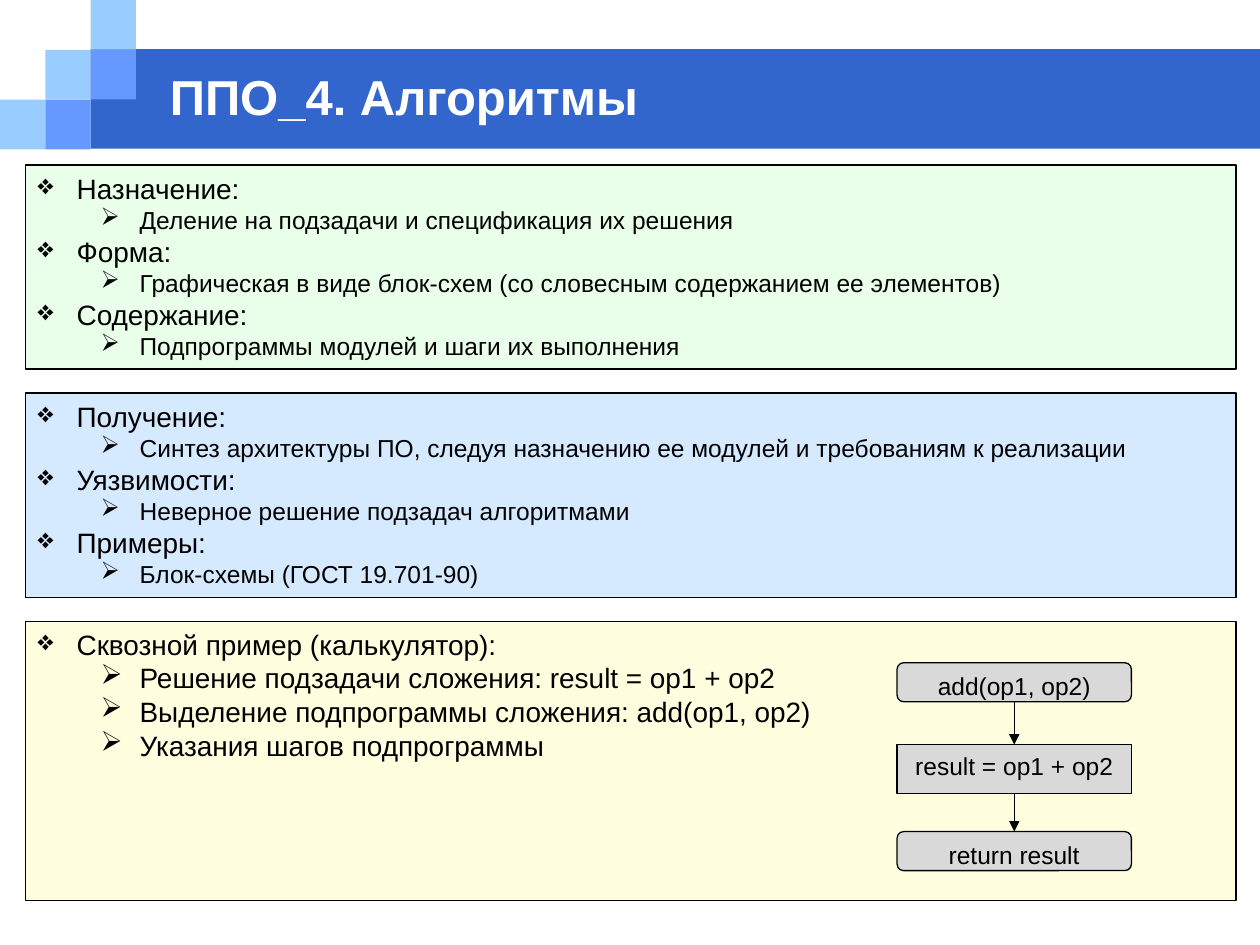
from lxml.etree import SubElement
from pptx import Presentation
from pptx.dml.color import RGBColor
from pptx.enum.shapes import MSO_CONNECTOR, MSO_SHAPE
from pptx.enum.text import MSO_ANCHOR, PP_ALIGN
from pptx.oxml.ns import qn
from pptx.util import Inches, Pt

BLACK = RGBColor(0x00, 0x00, 0x00)
WHITE = RGBColor(0xFF, 0xFF, 0xFF)
BAND_BLUE = RGBColor(0x33, 0x66, 0xCC)
LIGHT_BLUE = RGBColor(0x99, 0xCC, 0xFF)
MIDDLE_BLUE = RGBColor(0x66, 0x99, 0xFF)
GREEN = RGBColor(0x99, 0xFF, 0x99)
BLUE = RGBColor(0x33, 0x99, 0xFF)
YELLOW = RGBColor(0xFF, 0xFF, 0x66)
GREY = RGBColor(0xD9, 0xD9, 0xD9)

BULLETS = ["❖", "➢"]
INDENTS = [0.31, 0.81]

presentation = Presentation()
presentation.slide_width = Inches(10)
presentation.slide_height = Inches(7.5)
slide = presentation.slides.add_slide(presentation.slide_layouts[6])


def add_block(kind, left, top, width, height, fill, outlined=True):
    shape = slide.shapes.add_shape(
        kind, Inches(left), Inches(top), Inches(width), Inches(height))
    shape.shadow.inherit = False
    shape.fill.solid()
    shape.fill.fore_color.rgb = fill
    if outlined:
        shape.line.color.rgb = BLACK
        shape.line.width = Pt(0.75)
    else:
        shape.line.fill.background()
    shape.text_frame.vertical_anchor = MSO_ANCHOR.TOP
    return shape


def add_text(paragraph, text, size, color=BLACK, bold=False):
    run = paragraph.add_run()
    run.text = text
    run.font.name = "Arial"
    run.font.size = Pt(size)
    run.font.bold = bold
    run.font.color.rgb = color


# Header band with its staircase of squares
add_block(MSO_SHAPE.RECTANGLE, 0.72, 0.39, 9.28, 0.79, BAND_BLUE, outlined=False)
SQUARE_WIDTH, SQUARE_HEIGHT = 0.36, 0.395
squares = [(0, 2, LIGHT_BLUE), (1, 1, LIGHT_BLUE), (2, 0, LIGHT_BLUE),
           (2, 1, MIDDLE_BLUE), (1, 2, MIDDLE_BLUE)]
for column, row, color in squares:
    add_block(MSO_SHAPE.RECTANGLE, column * SQUARE_WIDTH, row * SQUARE_HEIGHT,
              SQUARE_WIDTH, SQUARE_HEIGHT, color, outlined=False)

title = slide.shapes.add_textbox(Inches(1.25), Inches(0.5), Inches(8.08), Inches(0.53))
title.text_frame.word_wrap = True
title.text_frame.vertical_anchor = MSO_ANCHOR.MIDDLE
add_text(title.text_frame.paragraphs[0], "ППО_4. Алгоритмы", 28, WHITE, bold=True)

# Panels: top, height, fill, size of the second level, (level, text) lines
panels = [
    (1.31, 1.62, GREEN, 14, [
        (0, "Назначение:"),
        (1, "Деление на подзадачи и спецификация их решения"),
        (0, "Форма:"),
        (1, "Графическая в виде блок-схем (со словесным содержанием ее элементов)"),
        (0, "Содержание:"),
        (1, "Подпрограммы модулей и шаги их выполнения"),
    ]),
    (3.12, 1.62, BLUE, 14, [
        (0, "Получение:"),
        (1, "Синтез архитектуры ПО, следуя назначению ее модулей и требованиям к реализации"),
        (0, "Уязвимости:"),
        (1, "Неверное решение подзадач алгоритмами"),
        (0, "Примеры:"),
        (1, "Блок-схемы (ГОСТ 19.701-90)"),
    ]),
    (4.93, 2.22, YELLOW, 16, [
        (0, "Сквозной пример (калькулятор):"),
        (1, "Решение подзадачи сложения: result = op1 + op2"),
        (1, "Выделение подпрограммы сложения: add(op1, op2)"),
        (1, "Указания шагов подпрограммы"),
    ]),
]
for top, height, color, detail_size, lines in panels:
    panel = add_block(MSO_SHAPE.RECTANGLE, 0.2, top, 9.61, height, color)
    fill_color = panel.fill._xPr.find(qn("a:solidFill"))[0]
    SubElement(fill_color, qn("a:alpha"), val="20000")
    frame = panel.text_frame
    for index, (level, text) in enumerate(lines):
        paragraph = frame.add_paragraph() if index else frame.paragraphs[0]
        paragraph.level = level
        paragraph.alignment = PP_ALIGN.LEFT if level else PP_ALIGN.JUSTIFY
        properties = paragraph._p.get_or_add_pPr()
        properties.set("marL", str(Inches(INDENTS[level])))
        properties.set("indent", str(Inches(-0.31)))
        SubElement(properties, qn("a:buChar"), char=BULLETS[level])
        add_text(paragraph, text, detail_size if level else 16)

# Flowchart of the addition subprogram
steps = [
    (MSO_SHAPE.FLOWCHART_ALTERNATE_PROCESS, 5.26, 0.31, "add(op1, op2)"),
    (MSO_SHAPE.RECTANGLE, 5.91, 0.39, "result = op1 + op2"),
    (MSO_SHAPE.FLOWCHART_ALTERNATE_PROCESS, 6.6, 0.31, "return result"),
]
blocks = []
for kind, top, height, text in steps:
    block = add_block(kind, 7.12, top, 1.86, height, GREY)
    paragraph = block.text_frame.paragraphs[0]
    paragraph.alignment = PP_ALIGN.CENTER
    add_text(paragraph, text, 14)
    blocks.append(block)

for upper, lower in zip(blocks, blocks[1:]):
    arrow = slide.shapes.add_connector(MSO_CONNECTOR.STRAIGHT, 0, 0, 0, 0)
    arrow.begin_connect(upper, 2)
    arrow.end_connect(lower, 0)
    arrow.line.color.rgb = BLACK
    arrow.line.width = Pt(0.75)
    SubElement(arrow.line._get_or_add_ln(), qn("a:tailEnd"), type="triangle")
    SubElement(arrow._element.spPr, qn("a:effectLst"))

presentation.save("out.pptx")
